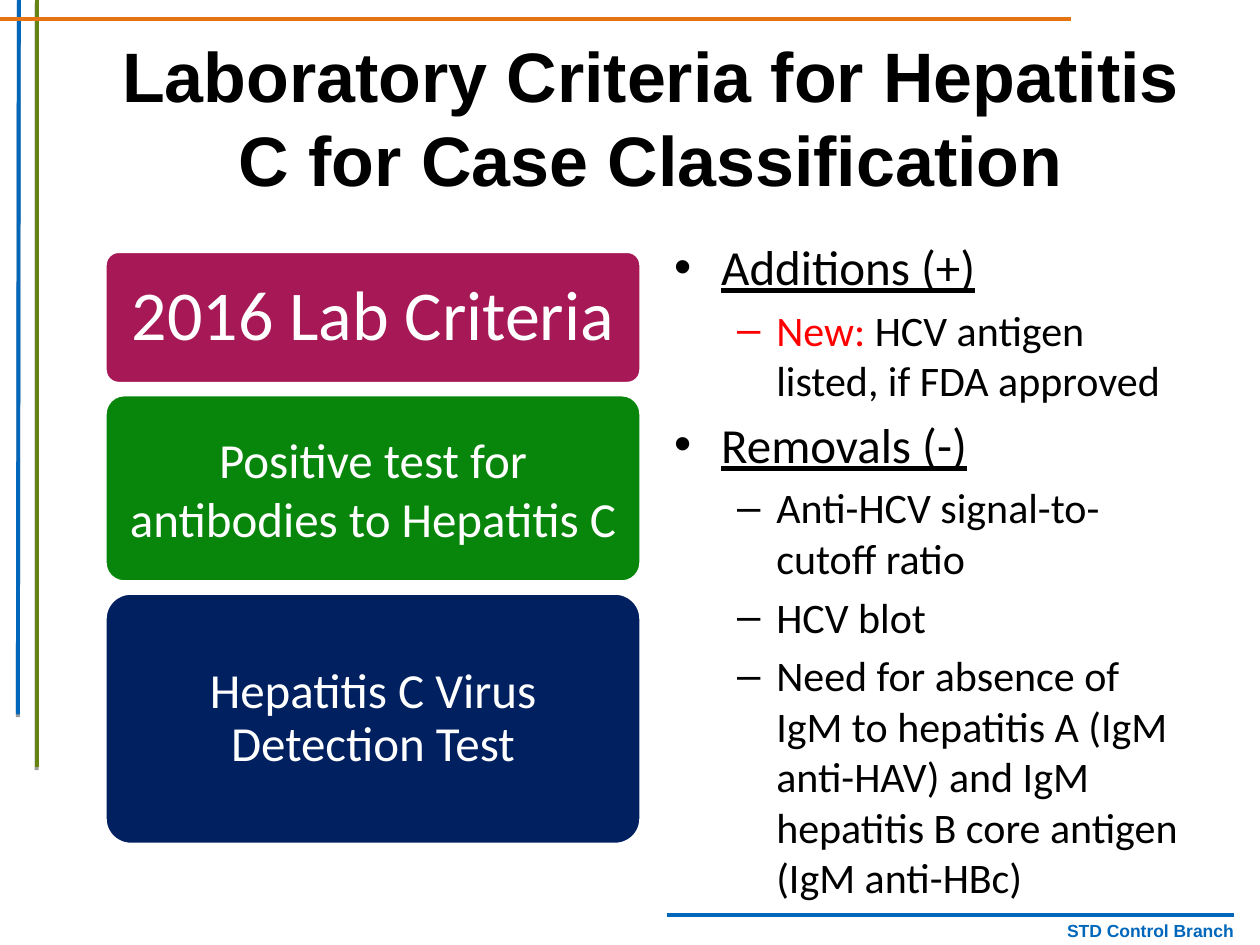
from lxml import etree
from pptx import Presentation
from pptx import util as u
from pptx.dml.color import RGBColor
from pptx.enum import shapes, text
from pptx.oxml import ns

BLACK = RGBColor(0x00, 0x00, 0x00)
WHITE = RGBColor(0xFF, 0xFF, 0xFF)
RED = RGBColor(0xFF, 0x00, 0x00)
BLUE = RGBColor(0x01, 0x67, 0xBB)
GREEN = RGBColor(0x65, 0x83, 0x13)
ORANGE = RGBColor(0xE4, 0x73, 0x13)
MAGENTA = RGBColor(0xA7, 0x19, 0x56)
LEAF = RGBColor(0x08, 0x86, 0x0B)
NAVY = RGBColor(0x00, 0x20, 0x60)

CENTER = text.PP_ALIGN.CENTER
RIGHT = text.PP_ALIGN.RIGHT

CARD_LEFT, CARD_TOP, CARD_WIDTH, CARD_GAP = 2.13, 5.08, 10.78, 0.25
CORNER = 0.1

# Level: (size in points, text indent in cm, hanging part in cm, bullet)
LEVELS = {0: (28, 0.95, 0.95, "•"), 1: (24, 2.06, 0.79, "–")}

# Card: (wording, fill, height in cm, size, line spacing)
CARDS = [
    ("2016 Lab Criteria", MAGENTA, 2.64, 40, 0.9),
    ("Positive test for antibodies to Hepatitis C", LEAF, 3.75, 28, 1.0),
    ("Hepatitis C Virus Detection Test", NAVY, 5.04, 28, 0.9),
]

# Change: (level, spans of wording and colour)
CHANGES = [
    (0, [("Additions (+)", BLACK)]),
    (1, [("New: ", RED), ("HCV antigen listed, if FDA approved", BLACK)]),
    (0, [("Removals (-)", BLACK)]),
    (1, [("Anti-HCV signal-to-cutoff ratio", BLACK)]),
    (1, [("HCV blot", BLACK)]),
    (1, [("Need for absence of IgM to hepatitis A (IgM anti-HAV) "
          "and IgM hepatitis B core antigen (IgM anti-HBc)", BLACK)]),
]


def write(para, wording, size, color, font="Calibri", bold=False,
          underline=False, align=None, spacing=None):
    """Add one formatted span to a paragraph."""
    if align is not None:
        para.alignment = align
    if spacing is not None:
        para.line_spacing = spacing
    span = para.add_run()
    span.text = wording
    span.font.name = font
    span.font.size = u.Pt(size)
    span.font.bold = bold
    span.font.underline = underline
    span.font.color.rgb = color


def add_box(page, left, top, width, height, anchor=text.MSO_ANCHOR.MIDDLE):
    box = page.shapes.add_textbox(u.Cm(left), u.Cm(top), u.Cm(width), u.Cm(height))
    box.text_frame.word_wrap = True
    box.text_frame.vertical_anchor = anchor
    return box.text_frame


def add_rule(page, start, end, color, shadow=False):
    """Draw a straight line, with a faint drop shadow if wanted."""
    rule = page.shapes.add_connector(
        shapes.MSO_CONNECTOR.STRAIGHT, *map(u.Cm, start + end))
    rule.line.color.rgb = color
    rule.line.width = u.Pt(2.25)
    effects = etree.SubElement(rule._element.spPr, ns.qn("a:effectLst"))
    if shadow:
        drop = etree.SubElement(effects, ns.qn("a:outerShdw"), blurRad="0",
                                dist=str(u.Pt(1.6)), dir="5400000", rotWithShape="0")
        shade = etree.SubElement(drop, ns.qn("a:srgbClr"), val="000000")
        etree.SubElement(shade, ns.qn("a:alpha"), val="38000")


def add_card(page, top, wording, fill, height, size, spacing):
    card = page.shapes.add_shape(
        shapes.MSO_SHAPE.ROUNDED_RECTANGLE,
        u.Cm(CARD_LEFT), u.Cm(top), u.Cm(CARD_WIDTH), u.Cm(height))
    card.adjustments[0] = CORNER
    card.shadow.inherit = False
    card.fill.solid()
    card.fill.fore_color.rgb = fill
    card.line.color.rgb = WHITE
    card.line.width = u.Pt(1.25)
    frame = card.text_frame
    frame.word_wrap = True
    frame.vertical_anchor = text.MSO_ANCHOR.MIDDLE
    frame.margin_left = frame.margin_right = u.Cm(0.25)
    write(frame.paragraphs[0], wording, size, WHITE, align=CENTER, spacing=spacing)


def add_bullet(para, indent, hanging, symbol):
    props = para._p.get_or_add_pPr()
    props.set("marL", str(u.Cm(indent)))
    props.set("indent", str(-u.Cm(hanging)))
    etree.SubElement(props, ns.qn("a:buFont"), typeface="Arial")
    etree.SubElement(props, ns.qn("a:buChar"), char=symbol)


def add_changes(page):
    frame = add_box(page, 13.34, 4.65, 10.8, 13.97, anchor=text.MSO_ANCHOR.TOP)
    for index, (level, spans) in enumerate(CHANGES):
        size, indent, hanging, symbol = LEVELS[level]
        para = frame.add_paragraph() if index else frame.paragraphs[0]
        para.level = level
        if index:
            para.space_before = u.Pt(size * 0.2)
        add_bullet(para, indent, hanging, symbol)
        for wording, color in spans:
            write(para, wording, size, color, underline=level == 0)


def main():
    deck = Presentation()
    deck.slide_width, deck.slide_height = u.Cm(25.4), u.Cm(19.05)
    page = deck.slides.add_slide(deck.slide_layouts[6])

    footer = add_box(page, 13.69, 18.24, 11.43, 1.02)
    write(footer.paragraphs[0], "STD Control Branch", 10, BLUE,
          font="Arial", bold=True, align=RIGHT)
    add_rule(page, (13.44, 18.44), (24.87, 18.44), BLUE)
    add_rule(page, (0.38, 0), (0.36, 14.4), BLUE, shadow=True)
    add_rule(page, (0.74, 0), (0.74, 15.47), GREEN, shadow=True)
    add_rule(page, (0, 0.38), (21.59, 0.38), ORANGE)

    title = add_box(page, 1.9, 0.76, 22.43, 3.18)
    write(title.paragraphs[0],
          "Laboratory Criteria for Hepatitis C for Case Classification",
          40, BLACK, font="Arial", bold=True, align=CENTER)

    top = CARD_TOP
    for wording, fill, height, size, spacing in CARDS:
        add_card(page, top, wording, fill, height, size, spacing)
        top += height + CARD_GAP
    add_changes(page)
    deck.save("out.pptx")


if __name__ == "__main__":
    main()
